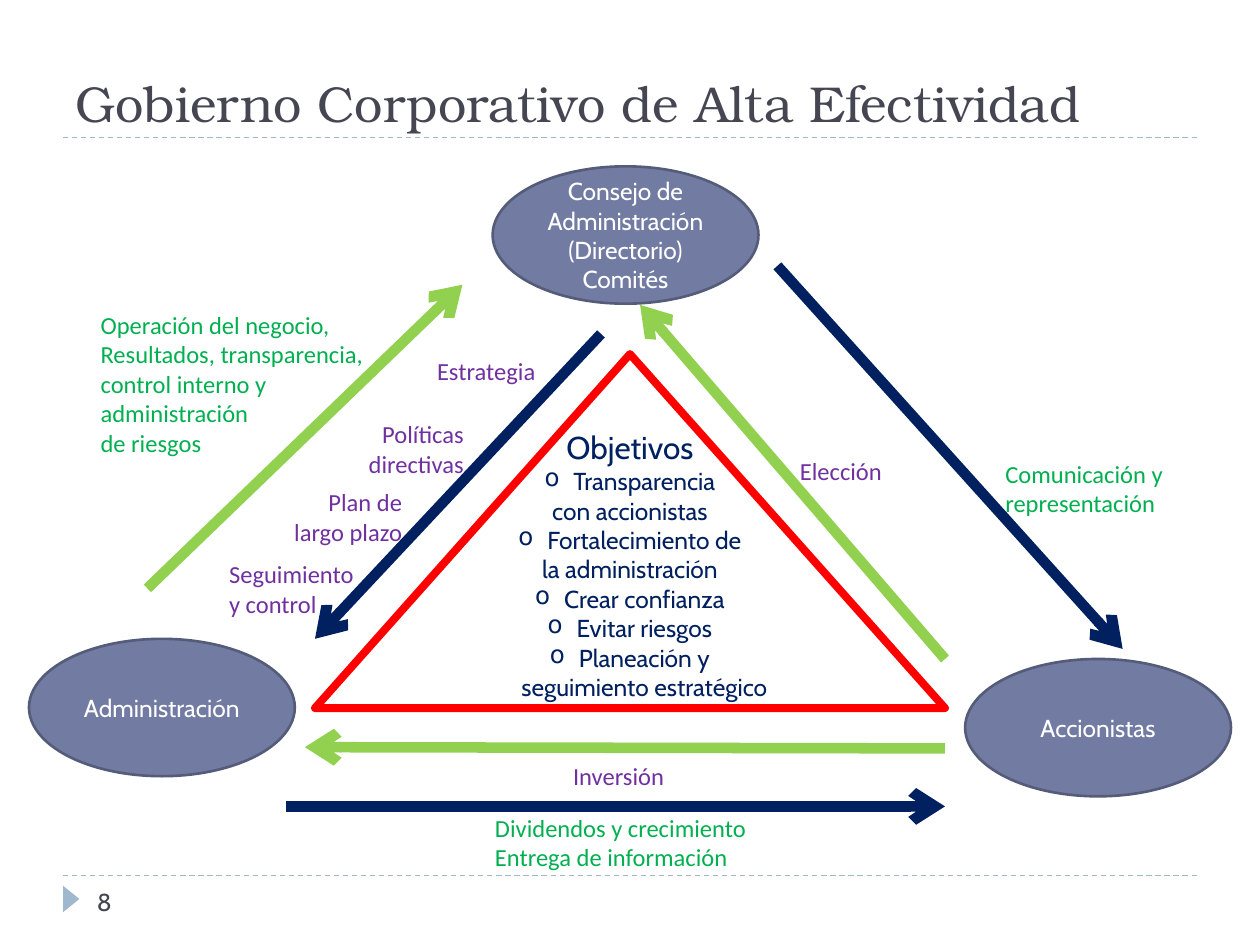
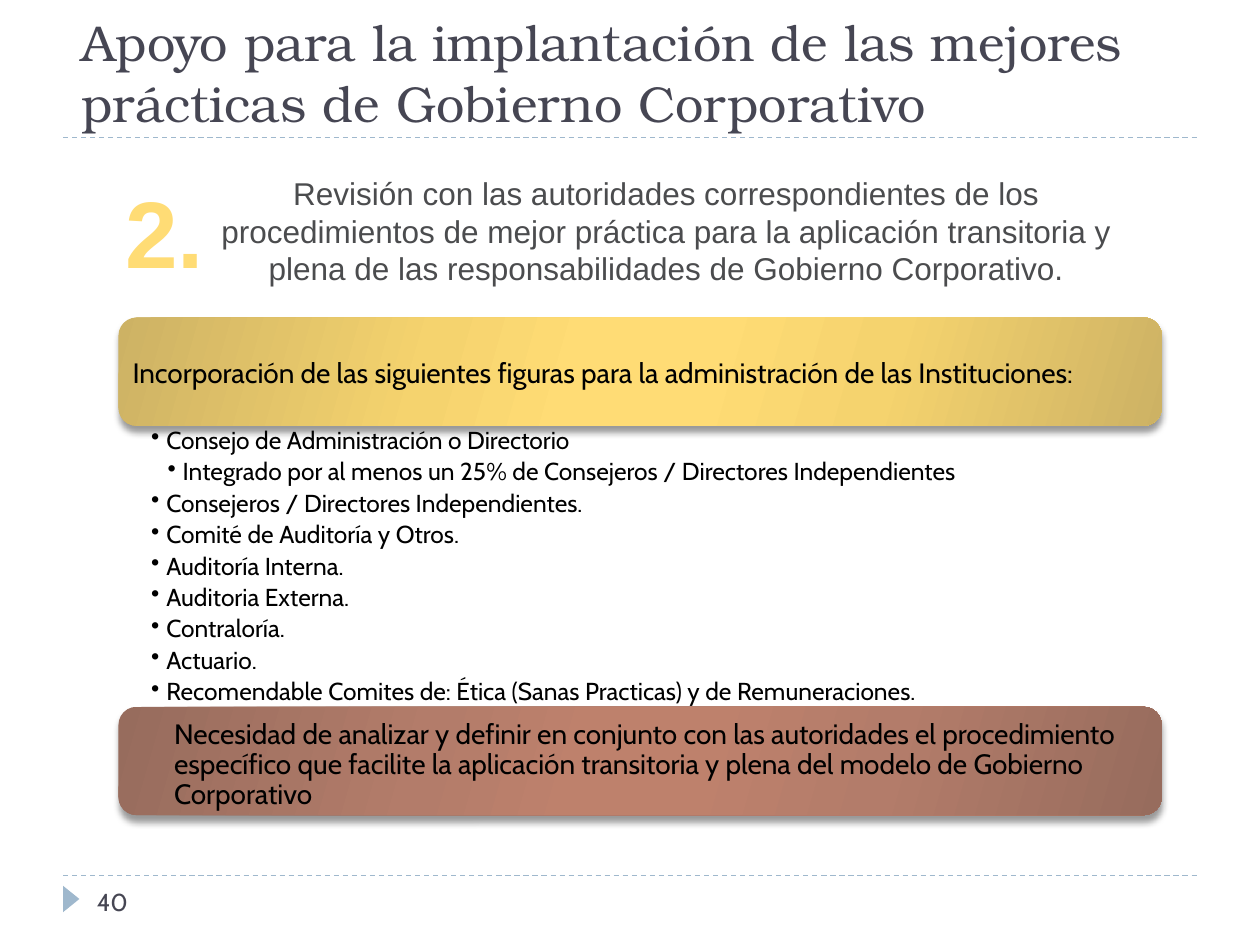
from dataclasses import dataclass

from lxml import etree
from pptx import Presentation
from pptx import util as u
from pptx.dml.color import RGBColor
from pptx.enum import dml, shapes, text
from pptx.oxml.ns import qn

SCALE = 9144
HUES = {
    "ink": "464653", "steel": "9FB8CD", "slate": "727CA3", "edge": "545C79",
    "white": "FFFFFF", "black": "000000", "navy": "002060", "lime": "92D050",
    "green": "00B050", "plum": "7030A0", "red": "FF0000", "gray": "4B4C4E",
    "gold": "FFDC75",
}
GOLD = ("CDB264", "F5D36E", "FFDC75")
CLAY = ("976C5D", "B37C6A", "BE816C")
STOPS = ((0, 0), (30, 1), (45, 2), (55, 2), (73, 1), (100, 0))
SIDES = {"l": text.PP_ALIGN.LEFT, "c": text.PP_ALIGN.CENTER, "r": text.PP_ALIGN.RIGHT}
ROWS = {"t": text.MSO_ANCHOR.TOP, "m": text.MSO_ANCHOR.MIDDLE, "b": text.MSO_ANCHOR.BOTTOM}
KINDS = shapes.MSO_SHAPE


@dataclass
class Box:
    x: int
    y: int
    w: int
    h: int

    def emu(self) -> list:
        return [px(n) for n in (self.x, self.y, self.w, self.h)]


@dataclass
class Row:
    words: str
    mark: str = ""
    left: int = 0
    hang: int = 0
    size: float = 0


@dataclass
class Arrow:
    start: tuple
    end: tuple
    hue: str


@dataclass
class Label:
    words: str
    box: Box
    hue: str
    side: str = "l"


@dataclass
class Node:
    words: str
    x: int
    y: int


@dataclass
class Band:
    words: str
    y: int
    tones: tuple
    pad: tuple


ARROWS = [
    Arrow((617, 211), (891, 515), "navy"),
    Arrow((477, 265), (250, 507), "navy"),
    Arrow((750, 523), (508, 242), "lime"),
    Arrow((117, 467), (367, 226), "lime"),
    Arrow((750, 594), (242, 593), "lime"),
    Arrow((227, 640), (750, 640), "navy"),
]
LABELS = [
    Label("Operación del negocio,\nResultados, transparencia,\ncontrol interno y\n"
          "administración\nde riesgos", Box(70, 241, 242, 128), "green"),
    Label("Comunicación y\nrepresentación", Box(788, 359, 165, 57), "green"),
    Label("Dividendos y crecimiento\nEntrega de información", Box(383, 640, 238, 57), "green"),
    Label("Elección", Box(625, 357, 94, 34), "plum"),
    Label("Inversión", Box(445, 599, 100, 34), "plum"),
    Label("Estrategia", Box(337, 278, 108, 34), "plum"),
    Label("Políticas\ndirectivas", Box(278, 328, 100, 57), "plum", "r"),
    Label("Plan de\nlargo plazo", Box(219, 382, 110, 57), "plum", "r"),
    Label("Seguimiento\ny control", Box(172, 439, 133, 57), "plum"),
]
NODES = [
    Node("Consejo de Administración (Directorio) Comités", 391, 132),
    Node("Administración", 23, 507),
    Node("Accionistas", 766, 523),
]
GOALS = [
    Row("Objetivos", size=18),
    Row("Transparencia", "o", 23, 23),
    Row("con accionistas"),
    Row("Fortalecimiento de", "o", 23, 23),
    Row("la administración"),
    Row("Crear confianza", "o", 23, 23),
    Row("Evitar riesgos", "o", 23, 23),
    Row("Planeación y seguimiento estratégico", "o", 23, 23),
]
BANDS = [
    Band("Incorporación de las siguientes figuras para la administración "
         "de las Instituciones:", 252, GOLD, (7, 9, 7, 5)),
    Band("Necesidad de analizar y definir en conjunto con las autoridades el "
         "procedimiento específico que facilite la aplicación transitoria y plena "
         "del modelo de Gobierno Corporativo", 561, CLAY, (40, 7, 7, 0)),
]
POINTS = [
    ("Consejo de Administración o Directorio", 12),
    ("Integrado por al menos un 25% de Consejeros / Directores Independientes", 25),
    ("Consejeros / Directores Independientes.", 12),
    ("Comité de Auditoría y Otros.", 12),
    ("Auditoría Interna.", 12),
    ("Auditoria Externa.", 12),
    ("Contraloría.", 12),
    ("Actuario.", 12),
    ("Recomendable Comites de: Ética (Sanas Practicas) y de Remuneraciones.", 12),
]


def px(n: float) -> int:
    return round(n * SCALE)


def rgb(hue: str) -> RGBColor:
    return RGBColor.from_string(HUES[hue])


def add(root, tag: str, **attrs):
    return etree.SubElement(root, qn(tag), {k: str(v) for k, v in attrs.items()})


def write(shape, words, *, size=14, hue="black", font="Cabin", side="l",
          row="t", pad=(10, 5, 10, 5), bold=False, lead=1.0, after=0) -> None:
    frame = shape.text_frame
    frame.word_wrap = True
    frame.vertical_anchor = ROWS[row]
    frame.margin_left, frame.margin_top, frame.margin_right, frame.margin_bottom = map(px, pad)
    items = [Row(w) for w in words.split("\n")] if isinstance(words, str) else words
    for i, item in enumerate(items):
        para = frame.paragraphs[0] if i == 0 else frame.add_paragraph()
        para.alignment = SIDES[side]
        para.line_spacing = lead
        para.space_after = u.Pt(after)
        if item.mark:
            props = para._p.get_or_add_pPr()
            props.set("marL", str(px(item.left)))
            props.set("indent", str(px(-item.hang)))
            add(props, "a:buChar", char=item.mark)
        run = para.add_run()
        run.text = item.words
        run.font.size = u.Pt(item.size or size)
        run.font.name = font
        run.font.bold = bold
        run.font.color.rgb = rgb(hue)


def note(slide, words, box: Box, **style) -> None:
    write(slide.shapes.add_textbox(*box.emu()), words, **style)


def draw(slide, kind, box: Box, fill: str = "", edge: str = "", width: float = 1):
    shape = slide.shapes.add_shape(kind, *box.emu())
    shape.shadow.inherit = False
    if fill:
        shape.fill.solid()
        shape.fill.fore_color.rgb = rgb(fill)
    else:
        shape.fill.background()
    if edge:
        shape.line.color.rgb = rgb(edge)
        shape.line.width = u.Pt(width)
    else:
        shape.line.fill.background()
    return shape


def link(slide, start: tuple, end: tuple, hue: str, width: float):
    line = slide.shapes.add_connector(shapes.MSO_CONNECTOR.STRAIGHT, *map(px, start + end))
    line.line.color.rgb = rgb(hue)
    line.line.width = u.Pt(width)
    add(line._element.spPr, "a:effectLst")
    return line


def shade(shape, tones: tuple) -> None:
    shape.fill.gradient()
    props = shape._element.spPr
    grad = props.find(qn("a:gradFill"))
    grad.clear()
    stops = add(grad, "a:gsLst")
    for place, tone in STOPS:
        add(add(stops, "a:gs", pos=place * 1000), "a:srgbClr", val=tones[tone])
    add(grad, "a:lin", ang=16 * 60000, scaled=0)
    cast = add(props.find(qn("a:effectLst")), "a:outerShdw", blurRad=u.Pt(4),
               dist=u.Pt(3.4), dir=90 * 60000, rotWithShape=0)
    add(add(cast, "a:srgbClr", val=HUES["black"]), "a:alpha", val=40000)


def base(deck, title: str, page: str, left: int):
    slide = deck.slides.add_slide(deck.slide_layouts[6])
    for y in (695, 109):
        rule = link(slide, (50, y), (950, y), "steel", 0.75)
        rule.line.dash_style = dml.MSO_LINE.DASH
    draw(slide, KINDS.ISOSCELES_TRIANGLE, Box(46, 707, 21, 13), "steel").rotation = 90
    note(slide, page, Box(67, 699, 217, 40), hue="ink")
    note(slide, title, Box(left, 8, 900, 102), size=28.8, hue="ink",
         font="TeX Gyre Bonum", row="b")
    return slide


def cycle(deck) -> None:
    slide = base(deck, "Gobierno Corporativo de Alta Efectividad", "8", 50)
    for node in NODES:
        oval = draw(slide, KINDS.OVAL, Box(node.x, node.y, 211, 109), "slate", "edge", 1.5)
        write(oval, node.words, hue="white", side="c", row="m")
    draw(slide, KINDS.ISOSCELES_TRIANGLE, Box(250, 281, 500, 281), edge="red", width=4.5)
    note(slide, GOALS, Box(375, 335, 250, 225), hue="navy", side="c")
    for arrow in ARROWS:
        line = link(slide, arrow.start, arrow.end, arrow.hue, 6)
        add(line.line._get_or_add_ln(), "a:tailEnd", type="arrow")
    for label in LABELS:
        note(slide, label.words, label.box, hue=label.hue, font="Calibri", side=label.side)


def steps(deck) -> None:
    slide = base(deck, "Apoyo para la implantación de las mejores prácticas "
                 "de Gobierno Corporativo", "40", 55)
    for band in BANDS:
        bar = draw(slide, KINDS.ROUNDED_RECTANGLE, Box(94, band.y, 828, 86))
        shade(bar, band.tones)
        write(bar, band.words, size=16, row="m", pad=band.pad, lead=0.9)
    note(slide, [Row(words, "•", left, 12) for words, left in POINTS],
         Box(94, 338, 828, 223), pad=(26, 2, 11, 2), lead=0.9, after=2.8)
    note(slide, "Revisión con las autoridades correspondientes de los procedimientos de "
         "mejor práctica para la aplicación transitoria y plena de las "
         "responsabilidades de Gobierno Corporativo.", Box(109, 133, 789, 101),
         size=18, hue="gray", font="Arial", side="c", pad=(60, 5, 10, 5))
    note(slide, "2.", Box(79, 133, 103, 101), size=54, hue="gold", font="Arial",
         side="c", bold=True)


def main() -> None:
    deck = Presentation()
    deck.slide_width, deck.slide_height = px(1000), px(750)
    cycle(deck)
    steps(deck)
    deck.save("out.pptx")


if __name__ == "__main__":
    main()
